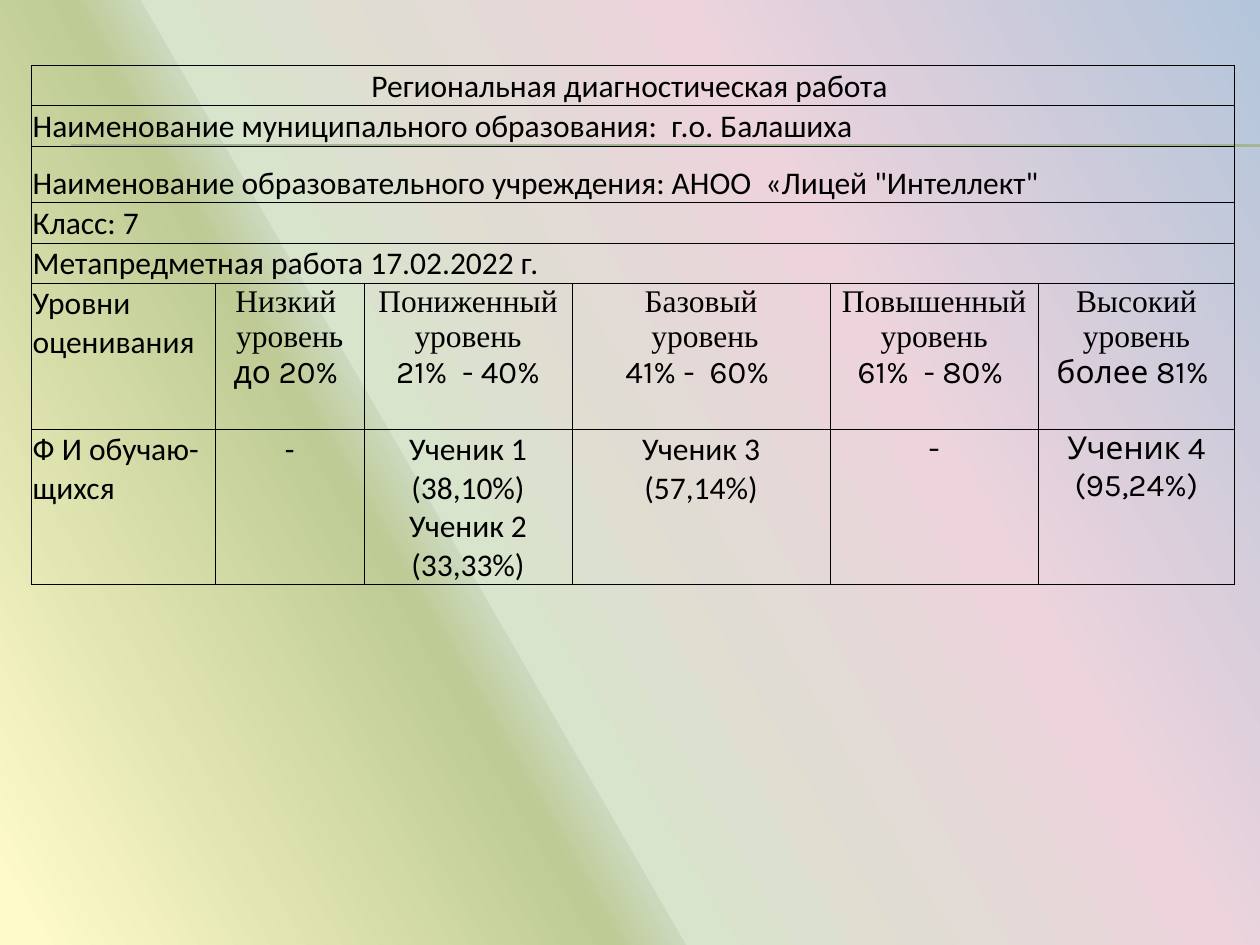
from lxml import etree
from pptx import Presentation
from pptx.dml.color import RGBColor
from pptx.enum.shapes import MSO_CONNECTOR
from pptx.enum.text import MSO_ANCHOR, PP_ALIGN
from pptx.oxml import parse_xml
from pptx.oxml.ns import nsdecls, qn
from pptx.util import Inches, Pt

BLACK = RGBColor(0x00, 0x00, 0x00)
GREEN = RGBColor(0xA5, 0xB5, 0x92)
BG_STOPS = [
    (0, RGBColor(0xB3, 0xC5, 0xDA)),
    (32, RGBColor(0xEC, 0xD3, 0xDC)),
    (62, RGBColor(0xD8, 0xE4, 0xCC)),
    (62, RGBColor(0xCC, 0xD9, 0xBE)),
    (66, RGBColor(0xBE, 0xCB, 0x95)),
    (98, RGBColor(0xFE, 0xFA, 0xC9)),
]
SERIF, ACCENT = "Times New Roman", "Karla"


def write_cell(cell, text, fonts=("Calibri",), align=PP_ALIGN.CENTER, anchor=MSO_ANCHOR.TOP):
    cell.margin_left = cell.margin_right = cell.margin_top = Inches(0.01)
    cell.margin_bottom = 0
    cell.vertical_anchor = anchor
    tf = cell.text_frame
    for i, line in enumerate(text.split("\n")):
        p = tf.add_paragraph() if i else tf.paragraphs[0]
        p.alignment = align
        r = p.add_run()
        r.text = line
        r.font.size = Pt(18)
        r.font.name = fonts[min(i, len(fonts) - 1)]
        r.font.color.rgb = BLACK


prs = Presentation()
prs.slide_width, prs.slide_height = Inches(10), Inches(7.5)
s = prs.slides.add_slide(prs.slide_layouts[6])

fill = s.background.fill
fill.gradient()
fill.gradient_angle = 210
stops = s.background._cSld.find(".//" + qn("a:gsLst"))
for stop in list(stops):
    stops.remove(stop)
for pos, color in BG_STOPS:
    stops.append(parse_xml(
        f'<a:gs {nsdecls("a")} pos="{pos * 1000}"><a:srgbClr val="{color}"/></a:gs>'))

for y in (1.15, 1.16):
    line = s.shapes.add_connector(
        MSO_CONNECTOR.STRAIGHT, Inches(0.56), Inches(y), Inches(10), Inches(y))
    line.line.color.rgb = GREEN
    line.line.width = Pt(0.75)
    etree.SubElement(line._element.spPr, qn("a:effectLst"))

col_widths = [1.46, 1.18, 1.65, 2.05, 1.65, 1.56]
row_heights = [0.32, 0.32, 0.45, 0.32, 0.32, 1.16, 1.23]
tbl = s.shapes.add_table(
    len(row_heights), len(col_widths), Inches(0.25), Inches(0.52),
    Inches(9.55), Inches(4.12)).table
tbl.first_row = tbl.horz_banding = False
for col, width in zip(tbl.columns, col_widths):
    col.width = Inches(width)
for row, height in zip(tbl.rows, row_heights):
    row.height = Inches(height)

for cell in tbl.iter_cells():
    tc_pr = cell._tc.get_or_add_tcPr()
    for side in ("lnL", "lnR", "lnT", "lnB"):
        tc_pr.append(parse_xml(
            f'<a:{side} {nsdecls("a")} w="{Pt(0.5)}"><a:solidFill>'
            f'<a:srgbClr val="{BLACK}"/></a:solidFill></a:{side}>'))
    cell.fill.background()

titles = [
    "Региональная диагностическая работа ",
    "Наименование муниципального образования:  г.о. Балашиха",
    'Наименование образовательного учреждения: АНОО  «Лицей "Интеллект"',
    "Класс: 7",
    "Метапредметная работа 17.02.2022 г.",
]
for i, title in enumerate(titles):
    tbl.cell(i, 0).merge(tbl.cell(i, len(col_widths) - 1))
    align = PP_ALIGN.LEFT if i else PP_ALIGN.CENTER
    write_cell(tbl.cell(i, 0), title, align=align, anchor=MSO_ANCHOR.BOTTOM)

for i, label in enumerate(["Уровни оценивания", "Ф И обучаю-щихся"], len(titles)):
    write_cell(tbl.cell(i, 0), label, align=PP_ALIGN.LEFT)

levels = [
    ("Низкий \nуровень\nдо 20% ", (SERIF, SERIF, ACCENT), "-", "Calibri"),
    ("Пониженный\nуровень\n21%  - 40%", (SERIF, SERIF, ACCENT),
     "Ученик 1\n(38,10%)\nУченик 2\n(33,33%)", "Calibri"),
    ("Базовый\n уровень\n41% -  60% ", (SERIF, SERIF, ACCENT),
     "Ученик 3\n(57,14%)", "Calibri"),
    ("Повышенный уровень\n61%  - 80% ", (SERIF, ACCENT), "-", ACCENT),
    ("Высокий уровень\nболее 81% ", (SERIF, ACCENT), "Ученик 4\n(95,24%)", ACCENT),
]
for j, (level, fonts, pupils, pupil_font) in enumerate(levels, 1):
    write_cell(tbl.cell(5, j), level, fonts)
    write_cell(tbl.cell(6, j), pupils, (pupil_font,))

prs.save("out.pptx")
